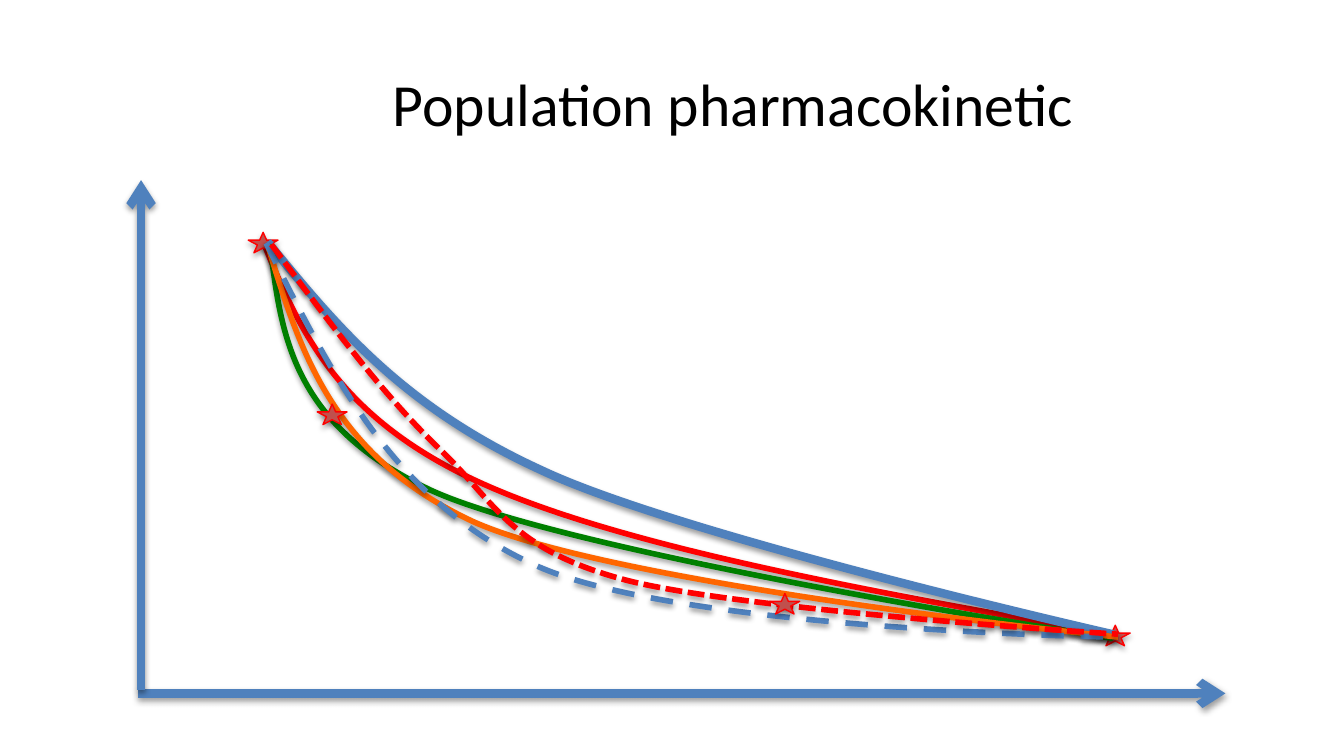
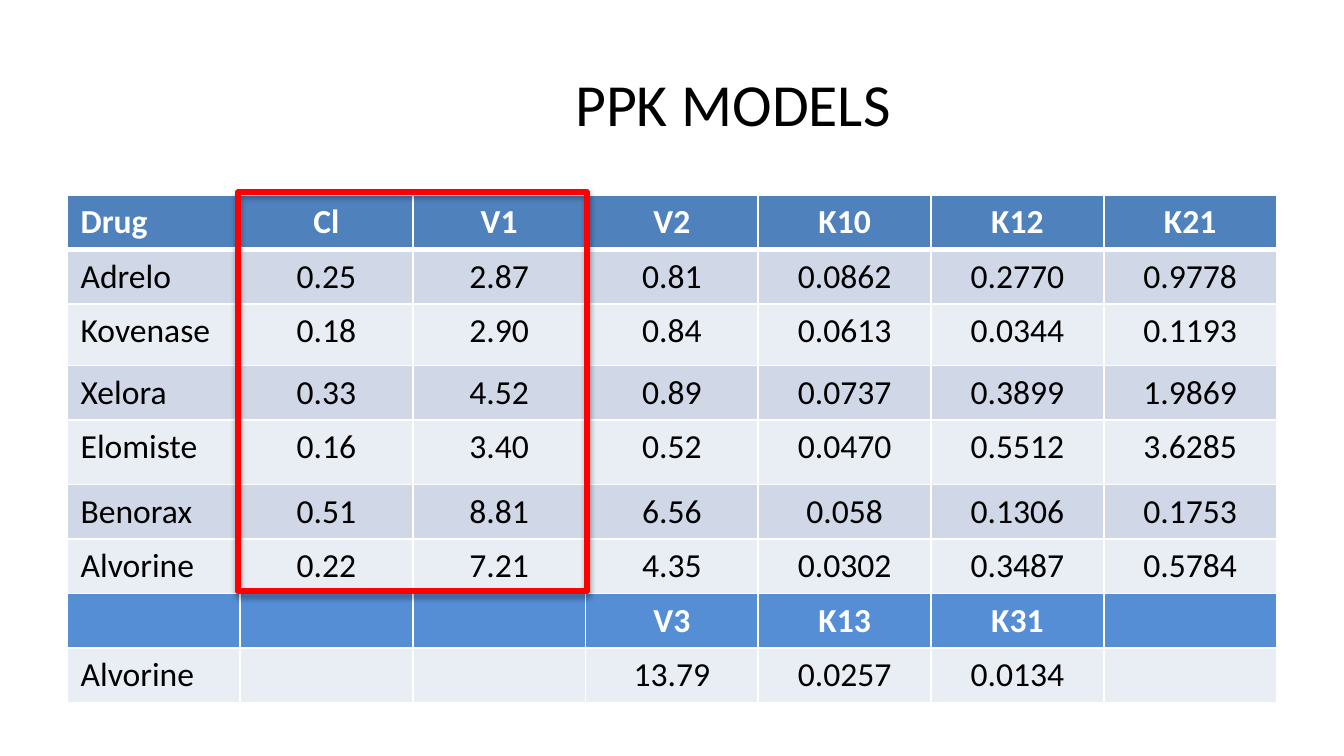
from dataclasses import dataclass
from lxml import etree
from pptx import Presentation
from pptx.dml.color import RGBColor
from pptx.enum.dml import MSO_LINE
from pptx.enum.shapes import MSO_CONNECTOR, MSO_SHAPE
from pptx.enum.text import MSO_ANCHOR, PP_ALIGN
from pptx.oxml.ns import qn
from pptx.util import Pt

SOLID, DASH, SYS_DASH = None, MSO_LINE.DASH, MSO_LINE.SQUARE_DOT
STRAIGHT = MSO_CONNECTOR.STRAIGHT
STAR, RECT = MSO_SHAPE.STAR_5_POINT, MSO_SHAPE.RECTANGLE
CENTER, LEFT = PP_ALIGN.CENTER, PP_ALIGN.LEFT
MIDDLE = MSO_ANCHOR.MIDDLE


@dataclass(frozen=True)
class Theme:
    font: str = "Calibri"
    title_size: float = 32
    cell_size: float = 18
    black: str = "000000"
    white: str = "FFFFFF"
    blue: str = "4F81BD"
    subhead: str = "558ED5"
    bands: tuple = ("D0D8E8", "E9EDF4")
    red: str = "FF0000"
    brick: str = "C0504D"
    green: str = "008000"
    orange: str = "FF6600"


T = Theme()
SLIDE_SIZE = (720, 405)
TITLE_BOX = (195, 16.5, 395.5, 76.5)
TITLES = ("Population pharmacokinetic", "PPK MODELS")

AXES = [((74, 371.5), (656.5, 371.5)), ((75.6, 369.5), (75.6, 96.5))]
STAR_SIZE = (16, 11)
LINE_SHADOW, SHAPE_SHADOW = (1.6, 38), (1.8, 35)

PLOT = [
    ("curve", T.red, 3, SOLID,
     [(140.4, 128.2), (159.8, 175.7), (179.3, 222.5), (255.6, 257.8),
      (331.9, 293), (465.8, 316.8), (599.8, 340.6)]),
    ("star", 133, 124.5),
    ("star", 589.5, 335),
    ("curve", T.blue, 4.5, SOLID,
     [(143.3, 129.6), (179.3, 173.5), (214.6, 217.4), (290.2, 252),
      (365, 287.3), (596.2, 339.8), (596.2, 339.8)]),
    ("curve", T.green, 3, SOLID,
     [(144.7, 131), (150.5, 179.3), (156.2, 227.5), (231.1, 262.8),
      (306.7, 297.4), (596.2, 342), (596.2, 342)]),
    ("curve", T.orange, 3, SOLID,
     [(143.3, 131), (160.6, 187.9), (177.8, 244.1), (253.4, 279.4),
      (329.8, 313.9), (599, 341.3), (599, 341.3)]),
    ("curve", T.blue, 3, DASH,
     [(142.6, 130.3), (176.4, 198.7), (210.2, 267.8), (285.8, 302.4),
      (361.4, 337.7), (596.2, 341.3), (596.2, 341.3)]),
    ("curve", T.red, 3, SYS_DASH,
     [(145.4, 131), (175, 170.6), (203.8, 210.2), (235.4, 240.5),
      (266.4, 270), (272.9, 293.8), (333.4, 310.3),
      (393.8, 326.9), (599, 339.8), (599, 339.8)]),
    ("star", 170, 216.5),
    ("star", 412.5, 318),
]

MODELS = [
    ("Drug", "Cl", "V1", "V2", "K10", "K12", "K21"),
    ("Adrelo", "0.25", "2.87", "0.81", "0.0862", "0.2770", "0.9778"),
    ("Kovenase", "0.18", "2.90", "0.84", "0.0613", "0.0344", "0.1193"),
    ("Xelora", "0.33", "4.52", "0.89", "0.0737", "0.3899", "1.9869"),
    ("Elomiste", "0.16", "3.40", "0.52", "0.0470", "0.5512", "3.6285"),
    ("Benorax", "0.51", "8.81", "6.56", "0.058", "0.1306", "0.1753"),
    ("Alvorine", "0.22", "7.21", "4.35", "0.0302", "0.3487", "0.5784"),
    ("", "", "", "V3", "K13", "K31", ""),
    ("Alvorine", "", "", "13.79", "0.0257", "0.0134", ""),
]
HEAD_FILLS = {0: T.blue, 7: T.subhead}
TABLE_BOX = (36, 104.5, 648, 269.3)
ROW_HEIGHT, TALL_ROWS = 28.8, {2: 33, 4: 34.5}
HIGHLIGHT_BOX = (127.4, 103, 187.2, 213.8)


def rgb(color):
    return RGBColor.from_string(color)


def pts(values):
    return [Pt(v) for v in values]


def style_line(shape, color, width, dash=SOLID):
    shape.line.color.rgb = rgb(color)
    shape.line.width = Pt(width)
    if dash is not None:
        shape.line.dash_style = dash


def add_shadow(shape, kind):
    distance, alpha = kind
    pr = shape._element.spPr
    for old in pr.findall(qn("a:effectLst")):
        pr.remove(old)
    effects = etree.SubElement(pr, qn("a:effectLst"))
    shadow = etree.SubElement(effects, qn("a:outerShdw"), blurRad=str(Pt(3.1)),
                              dist=str(Pt(distance)), dir="5400000", rotWithShape="0")
    color = etree.SubElement(shadow, qn("a:srgbClr"), val=T.black)
    etree.SubElement(color, qn("a:alpha"), val=str(alpha * 1000))


def add_run(p, text, size, color, bold=False):
    r = p.add_run()
    r.text = text
    r.font.name = T.font
    r.font.size = Pt(size)
    r.font.bold = bold
    r.font.color.rgb = rgb(color)


def add_slide(prs, title):
    s = prs.slides.add_slide(prs.slide_layouts[5])
    sp = s.shapes.title
    sp.left, sp.top, sp.width, sp.height = pts(TITLE_BOX)
    tf = sp.text_frame
    tf.word_wrap = True
    tf.vertical_anchor = MIDDLE
    p = tf.paragraphs[0]
    p.alignment = CENTER
    add_run(p, title, T.title_size, T.black)
    return s


def add_axis(s, start, end):
    line = s.shapes.add_connector(STRAIGHT, *pts(start + end))
    style_line(line, T.blue, 4.5)
    etree.SubElement(line.line._get_or_add_ln(), qn("a:tailEnd"), type="arrow")
    add_shadow(line, LINE_SHADOW)


def add_curve(s, color, width, dash, points):
    start, *rest = [tuple(pts(pt)) for pt in points]
    builder = s.shapes.build_freeform(*start)
    builder.add_line_segments(rest, close=False)
    sp = builder.convert_to_shape()
    segments = list(sp._element.iter(qn("a:lnTo")))
    for i in range(0, len(segments), 3):
        bezier = etree.Element(qn("a:cubicBezTo"))
        segments[i].addprevious(bezier)
        for segment in segments[i:i + 3]:
            bezier.append(segment[0])
            segment.getparent().remove(segment)
    sp.fill.background()
    style_line(sp, color, width, dash)
    add_shadow(sp, LINE_SHADOW)


def add_star(s, left, top):
    sp = s.shapes.add_shape(STAR, *pts((left, top) + STAR_SIZE))
    sp.fill.solid()
    sp.fill.fore_color.rgb = rgb(T.brick)
    style_line(sp, T.red, 0.75)
    add_shadow(sp, SHAPE_SHADOW)


def add_borders(cell, row):
    widths = {"lnL": 1, "lnR": 1, "lnT": 3 if row == 1 else 1, "lnB": 3 if row == 0 else 1}
    tc_pr = cell._tc.get_or_add_tcPr()
    for i, (side, width) in enumerate(widths.items()):
        ln = etree.Element(qn("a:" + side), w=str(Pt(width)))
        fill = etree.SubElement(ln, qn("a:solidFill"))
        etree.SubElement(fill, qn("a:srgbClr"), val=T.white)
        tc_pr.insert(i, ln)


def add_models(s):
    table = s.shapes.add_table(len(MODELS), len(MODELS[0]), *pts(TABLE_BOX)).table
    for column in table.columns:
        column.width = Pt(TABLE_BOX[2] / len(MODELS[0]))
    for i, values in enumerate(MODELS):
        table.rows[i].height = Pt(TALL_ROWS.get(i, ROW_HEIGHT))
        head = i in HEAD_FILLS
        for j, text in enumerate(values):
            cell = table.cell(i, j)
            cell.fill.solid()
            cell.fill.fore_color.rgb = rgb(HEAD_FILLS.get(i, T.bands[(i + 1) % 2]))
            add_borders(cell, i)
            p = cell.text_frame.paragraphs[0]
            p.alignment = CENTER if j else LEFT
            if text:
                add_run(p, text, T.cell_size, T.white if head else T.black, head)


def add_highlight(s):
    sp = s.shapes.add_shape(RECT, *pts(HIGHLIGHT_BOX))
    sp.fill.background()
    style_line(sp, T.red, 3)
    add_shadow(sp, SHAPE_SHADOW)


def main():
    prs = Presentation()
    prs.slide_width, prs.slide_height = pts(SLIDE_SIZE)
    plot, models = [add_slide(prs, title) for title in TITLES]
    for start, end in AXES:
        add_axis(plot, start, end)
    draw = {"curve": add_curve, "star": add_star}
    for kind, *args in PLOT:
        draw[kind](plot, *args)
    add_models(models)
    add_highlight(models)
    prs.save("out.pptx")


if __name__ == "__main__":
    main()
